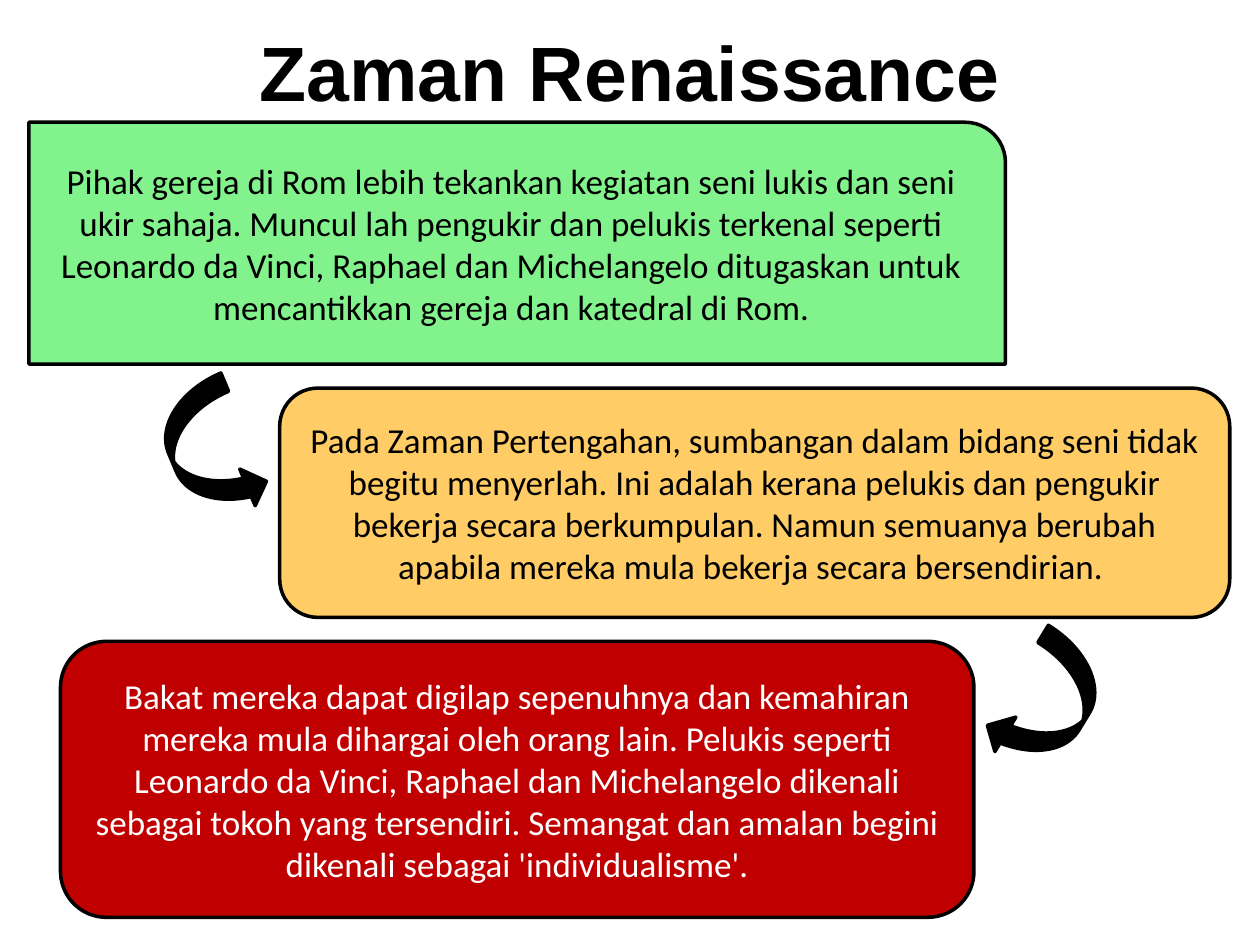
from dataclasses import dataclass

from pptx import Presentation
from pptx.dml.color import RGBColor
from pptx.enum.shapes import MSO_SHAPE
from pptx.enum.text import MSO_ANCHOR, PP_ALIGN
from pptx.util import Inches, Pt

ROUND_ONE = MSO_SHAPE.ROUND_1_RECTANGLE
ROUND_ALL = MSO_SHAPE.FLOWCHART_ALTERNATE_PROCESS
CURVED_ARROW = MSO_SHAPE.CURVED_LEFT_ARROW
CENTER = PP_ALIGN.CENTER
MIDDLE = MSO_ANCHOR.MIDDLE


@dataclass(frozen=True)
class Theme:
    black: RGBColor = RGBColor(0x00, 0x00, 0x00)
    white: RGBColor = RGBColor(0xFF, 0xFF, 0xFF)
    green: RGBColor = RGBColor(0x82, 0xF2, 0x8D)
    orange: RGBColor = RGBColor(0xFF, 0xCC, 0x66)
    red: RGBColor = RGBColor(0xC0, 0x00, 0x00)
    title_font: str = "Arial"
    body_font: str = "Calibri"
    title_size: Pt = Pt(44)
    body_size: Pt = Pt(20)
    outline: Pt = Pt(2)


theme = Theme()


def style_text(frame, text, font_name, size, color, bold=False):
    frame.text = text
    frame.word_wrap = True
    frame.vertical_anchor = MIDDLE
    para = frame.paragraphs[0]
    para.alignment = CENTER
    font = para.runs[0].font
    font.name, font.size, font.bold = font_name, size, bold
    font.color.rgb = color


def add_outlined_shape(slide, kind, place, fill):
    shape = slide.shapes.add_shape(kind, *map(Inches, place))
    shape.shadow.inherit = False
    shape.fill.solid()
    shape.fill.fore_color.rgb = fill
    shape.line.color.rgb = theme.black
    shape.line.width = theme.outline
    return shape


deck = Presentation()
deck.slide_width, deck.slide_height = Inches(10), Inches(7.5)
page = deck.slides.add_slide(deck.slide_layouts[5])

title = page.shapes.title
title.left, title.top = Inches(0.5), Inches(-0.06)
title.width, title.height = Inches(9), Inches(1.25)
style_text(title.text_frame, "Zaman Renaissance", theme.title_font,
           theme.title_size, theme.black, bold=True)

# Shape, (left, top, width, height), fill, text colour, wording
steps = [
    (ROUND_ONE, (0.23, 0.97, 7.75, 1.92), theme.green, theme.black,
     "Pihak gereja di Rom lebih tekankan kegiatan seni lukis dan seni ukir "
     "sahaja. Muncul lah pengukir dan pelukis terkenal seperti Leonardo da "
     "Vinci, Raphael dan Michelangelo ditugaskan untuk mencantikkan gereja "
     "dan katedral di Rom."),
    (ROUND_ALL, (2.22, 3.08, 7.54, 1.82), theme.orange, theme.black,
     "Pada Zaman Pertengahan, sumbangan dalam bidang seni tidak begitu "
     "menyerlah. Ini adalah kerana pelukis dan pengukir bekerja secara "
     "berkumpulan. Namun semuanya berubah apabila mereka mula bekerja "
     "secara bersendirian. "),
    (ROUND_ALL, (0.48, 5.09, 7.25, 2.19), theme.red, theme.white,
     "Bakat mereka dapat digilap sepenuhnya dan kemahiran mereka mula "
     "dihargai oleh orang lain. Pelukis seperti Leonardo da Vinci, Raphael "
     "dan Michelangelo dikenali sebagai tokoh yang tersendiri. Semangat dan "
     "amalan begini dikenali sebagai 'individualisme'."),
]
for kind, place, fill, text_color, wording in steps:
    box = add_outlined_shape(page, kind, place, fill)
    style_text(box.text_frame, wording, theme.body_font, theme.body_size,
               text_color)

# (left, top, width, height), rotation, mirrored
arrows = [
    ((1.36, 3.04, 0.63, 1.09), 337.2, True),
    ((7.99, 5.05, 0.64, 1.09), 31.4, False),
]
for place, rotation, mirrored in arrows:
    arrow = add_outlined_shape(page, CURVED_ARROW, place, theme.black)
    arrow.rotation = rotation
    if mirrored:
        arrow.element.spPr.xfrm.set("flipH", "1")

deck.save("out.pptx")
